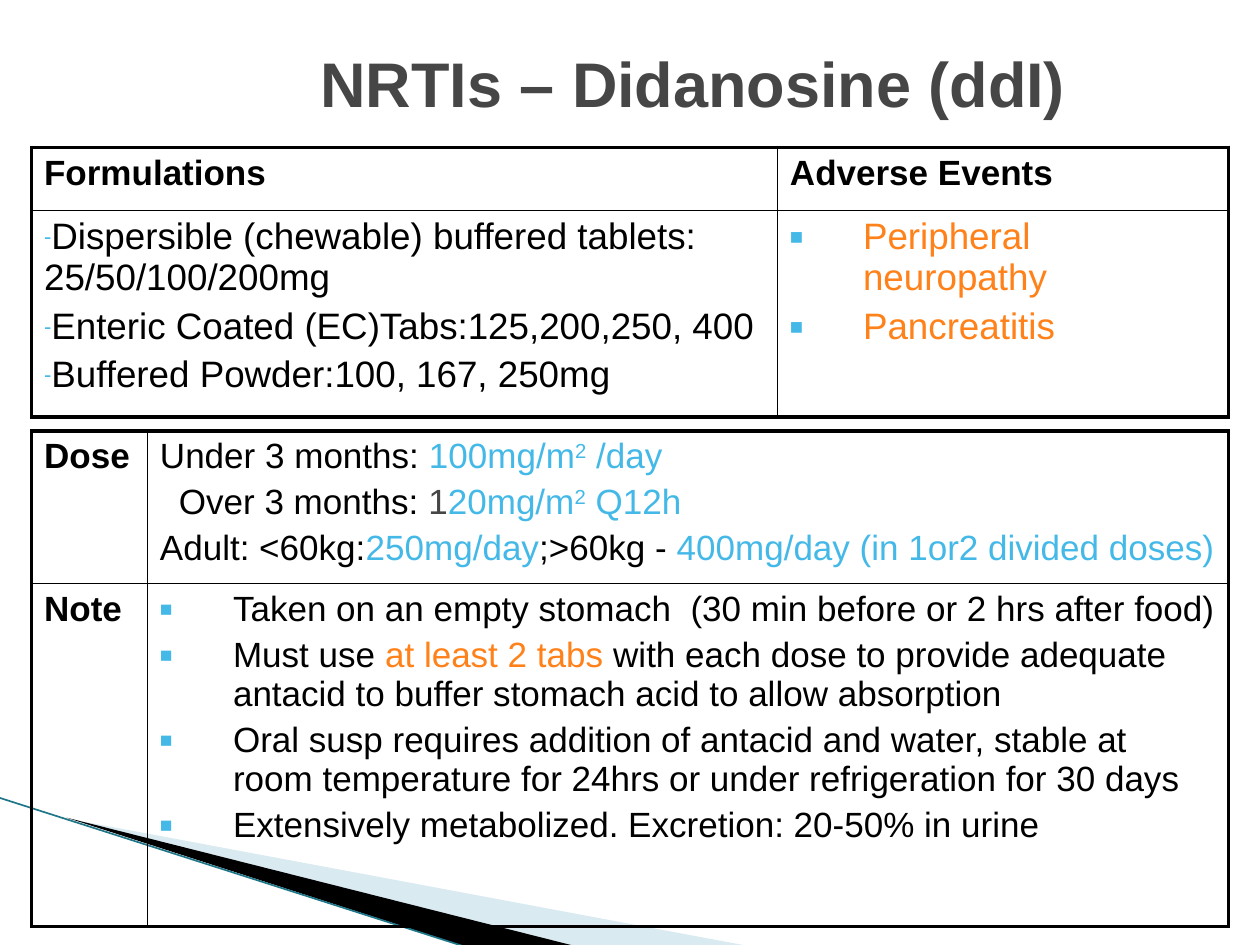
"""Build the didanosine drug summary slide."""
from lxml.etree import SubElement
from pptx import Presentation
from pptx.dml.color import RGBColor
from pptx.enum.shapes import MSO_CONNECTOR
from pptx.enum.text import MSO_ANCHOR, PP_ALIGN
from pptx.oxml.ns import qn
from pptx.util import Inches, Pt

BLACK, GRAY, BLUE, ORANGE = "000000", "464646", "44B9E8", "FF8119"
TITLE = "NRTIs – Didanosine (ddI)"
DASH = dict(size=21, bullet="-")
SQUARE = dict(bullet="■", indent=0.58, hanging=0.58)
EVENT = dict(SQUARE, size=21)
HEADING = dict(bold=True)

TABLES = [
    dict(top=1.17, columns=[5.92, 3.58], heights=[0.5, 1.64], rows=[
        [[("Formulations", HEADING)], [("Adverse Events", HEADING)]],
        [[("Dispersible (chewable) buffered tablets: 25/50/100/200mg", DASH),
          ("Enteric Coated (EC)Tabs:125,200,250, 400", DASH),
          ("Buffered Powder:100, 167, 250mg", DASH)],
         [([("Peripheral neuropathy", ORANGE)], EVENT),
          ([("Pancreatitis", ORANGE)], EVENT)]],
    ]),
    dict(top=3.42, columns=[0.92, 8.58], heights=[1.07, 2.72], rows=[
        [[("Dose", HEADING)],
         [([("Under 3 months: ", BLACK), ("100mg/m", BLUE), ("2", BLUE, True),
            (" /day", BLUE)], {}),
          ([("Over 3 months: ", BLACK), ("1", GRAY), ("20mg/m", BLUE),
            ("2", BLUE, True), (" Q12h", BLUE)], dict(indent=0.15)),
          ([("Adult: <60kg:", BLACK), ("250mg/day", BLUE), (";>60kg - ", BLACK),
            ("400mg/day (in 1or2 divided doses)", BLUE)], {})]],
        [[("Note", HEADING)],
         [("Taken on an empty stomach  (30 min before or 2 hrs after food)", SQUARE),
          ([("Must use ", BLACK), ("at least 2 tabs", ORANGE),
            (" with each dose to provide adequate antacid to buffer stomach acid "
             "to allow absorption", BLACK)], SQUARE),
          ("Oral susp requires addition of antacid and water, stable at room "
           "temperature for 24hrs or under refrigeration for 30 days", SQUARE),
          ("Extensively metabolized. Excretion: 20-50% in urine", SQUARE)]],
    ]),
]

WEDGES = [
    ("A0CBDC", 40, [(0.55, 6.5), (5.95, 7.51), (4.56, 7.51)]),
    (BLACK, 100, [(0.53, 6.49), (4.57, 7.51), (3.72, 7.52)]),
]
STRIPE = dict(start=(-0.01, 6.33), end=(3.71, 7.52), color="1F7688")


def rgb(color):
    return RGBColor.from_string(color)


def add_text(frame, text, size=20, bold=False, color=BLACK, bullet=None,
             indent=0, hanging=0, align=PP_ALIGN.LEFT):
    first = not frame.paragraphs[0].runs
    paragraph = frame.paragraphs[0] if first else frame.add_paragraph()
    paragraph.alignment = align
    props = paragraph._p.get_or_add_pPr()
    props.set("marL", str(Inches(indent)))
    props.set("indent", str(-Inches(hanging)))
    if bullet:
        SubElement(SubElement(props, qn("a:buClr")), qn("a:srgbClr"), val=BLUE)
        SubElement(props, qn("a:buSzPct"), val="60000")
        SubElement(props, qn("a:buFont"), typeface="Arial")
        SubElement(props, qn("a:buChar"), char=bullet)
    if not first:
        paragraph.space_before = Pt(size * 0.2)
    for words, tint, *raised in [(text, color)] if isinstance(text, str) else text:
        run = paragraph.add_run()
        run.text = words
        run.font.name, run.font.size, run.font.bold = "Arial", Pt(size), bold
        run.font.color.rgb = rgb(tint)
        if raised:
            run.font._element.set("baseline", "30000")


def set_borders(cell, outer_sides):
    props = cell._tc.get_or_add_tcPr()
    for side in "LRTB":
        width = Pt(2.25 if side in outer_sides else 1)
        border = SubElement(props, qn(f"a:ln{side}"), w=str(width))
        SubElement(SubElement(border, qn("a:solidFill")), qn("a:srgbClr"), val=BLACK)


def add_facts(slide, top, columns, heights, rows):
    table = slide.shapes.add_table(
        len(rows), len(columns), Inches(0.25), Inches(top),
        Inches(sum(columns)), Inches(sum(heights))).table
    table.first_row = table.horz_banding = False
    for column, width in zip(table.columns, columns):
        column.width = Inches(width)
    for r, (row, height) in enumerate(zip(rows, heights)):
        table.rows[r].height = Inches(height)
        for c, paragraphs in enumerate(row):
            cell = table.cell(r, c)
            set_borders(cell, "TB"[r] + "LR"[c])
            cell.fill.background()
            for text, style in paragraphs:
                add_text(cell.text_frame, text, **style)


def add_swoosh(slide):
    for color, opacity, points in WEDGES:
        start, *others = [(Inches(x), Inches(y)) for x, y in points]
        builder = slide.shapes.build_freeform(*start)
        builder.add_line_segments(others)
        wedge = builder.convert_to_shape()
        wedge.shadow.inherit = False
        wedge.line.fill.background()
        wedge.fill.solid()
        wedge.fill.fore_color.rgb = rgb(color)
        if opacity < 100:
            tint = wedge._element.spPr.find(".//" + qn("a:srgbClr"))
            SubElement(tint, qn("a:alpha"), val=str(opacity * 1000))
    ends = [Inches(v) for v in STRIPE["start"] + STRIPE["end"]]
    stripe = slide.shapes.add_connector(MSO_CONNECTOR.STRAIGHT, *ends)
    stripe.line.color.rgb = rgb(STRIPE["color"])
    stripe.line.width = Pt(0.95)
    SubElement(stripe._element.spPr, qn("a:effectLst"))


def main():
    deck = Presentation()
    deck.slide_width, deck.slide_height = Inches(10), Inches(7.5)
    slide = deck.slides.add_slide(deck.slide_layouts[6])
    add_swoosh(slide)
    heading = slide.shapes.add_textbox(
        Inches(1), Inches(0.25), Inches(9), Inches(0.81)).text_frame
    heading.word_wrap = True
    heading.vertical_anchor = MSO_ANCHOR.MIDDLE
    add_text(heading, TITLE, size=36, bold=True, color=GRAY, align=PP_ALIGN.CENTER)
    for facts in TABLES:
        add_facts(slide, **facts)
    deck.save("out.pptx")


if __name__ == "__main__":
    main()
